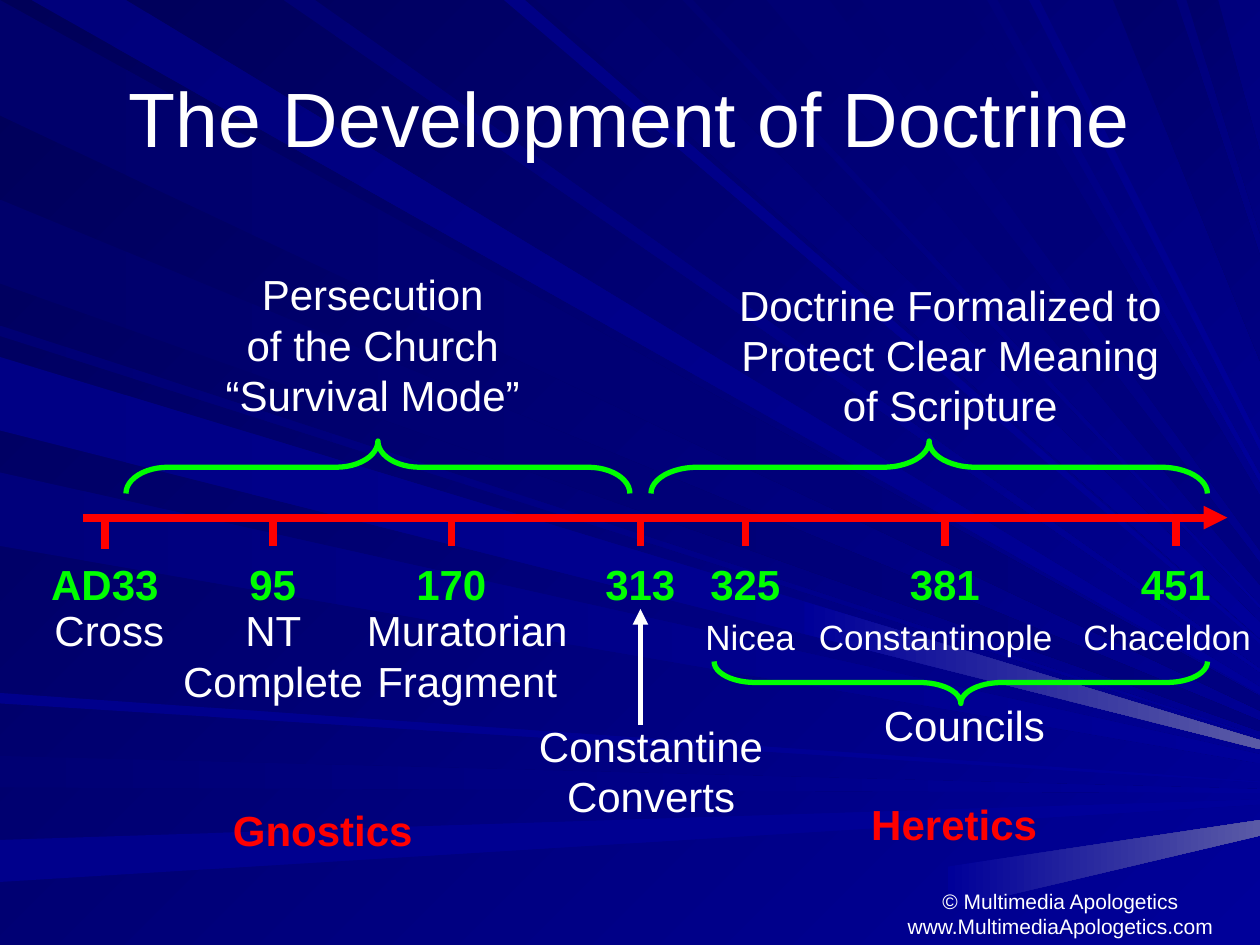
from dataclasses import dataclass

from lxml import etree
from pptx import Presentation
from pptx.dml.color import RGBColor
from pptx.enum.shapes import MSO_CONNECTOR, MSO_SHAPE
from pptx.enum.text import MSO_ANCHOR, PP_ALIGN
from pptx.oxml.ns import qn
from pptx.util import Emu, Inches, Pt

LEFT, CENTER = PP_ALIGN.LEFT, PP_ALIGN.CENTER
TOP, MIDDLE, BOTTOM = MSO_ANCHOR.TOP, MSO_ANCHOR.MIDDLE, MSO_ANCHOR.BOTTOM
STRAIGHT, BRACE = MSO_CONNECTOR.STRAIGHT, MSO_SHAPE.RIGHT_BRACE
FONT = "Arial"
COLS, ROWS = 120, 90  # grid of the 10 x 7.5 inch slide
CELL = Inches(10) / COLS
VANISH_X, VANISH_Y = 114 * COLS / 100, 84 * ROWS / 100  # where the rays meet

COLORS = {"white": "FFFFFF", "red": "FF0000", "green": "00FF00", "haze": "5A5AA6",
          "night": "000058", "dark": "00006B", "deep": "000073", "navy": "00007B",
          "dusk": "000080", "blue": "000085", "clear": "00008C", "royal": "000099"}


@dataclass
class Ray:
    first: float  # span on the top or left edge
    last: float
    start: str
    end: str = "royal"
    near: float = 0  # share of the way to the vanishing point


@dataclass
class Label:
    text: str
    x: float
    y: float
    w: float
    size: int = 24
    lines: int = 1
    color: str = "white"
    bold: bool = False
    align: PP_ALIGN = CENTER
    anchor: MSO_ANCHOR = TOP
    wrap: bool = True

    @property
    def h(self) -> float:
        return 1.2 + self.lines * self.size / 5


@dataclass
class Brace:
    x: float
    y: float
    w: float
    h: float
    rotation: int


@dataclass
class Line:
    x1: float
    y1: float
    x2: float
    y2: float
    color: str = "red"
    width: float = 4.5
    arrow: bool = False


TOP_RAYS = [
    Ray(3, 12, "navy"), Ray(27, 30, "deep"), Ray(48, 50, "blue"), Ray(51, 59, "dark"),
    Ray(65, 66, "deep"), Ray(73, 79, "deep", "dusk"), Ray(82, 92, "deep", "dusk"),
    Ray(94, 95, "navy"), Ray(98, 99, "blue"), Ray(106, 112, "dark", "dusk"),
    Ray(113, 116, "dark", "dusk"),
]
LEFT_RAYS = [
    Ray(0, 11, "dark", "dusk"), Ray(19, 27, "dark", "dusk"), Ray(31, 32, "deep"),
    Ray(34, 41, "blue"), Ray(34, 41, "royal", "haze", 0.56), Ray(45, 52, "navy"),
    Ray(66, 67, "clear"), Ray(72, 75, "deep"), Ray(80, 84, "clear"),
    Ray(96, 108, "royal", "haze", 0.66),
]
DATES = {"AD33": 10, "95": 26, "170": 43, "313": 61, "325": 71, "381": 90, "451": 112}
LABELS = [
    Label("© Multimedia Apologetics\nwww.MultimediaApologetics.com", 82, 84, 38, 12, 2, anchor=BOTTOM),
    Label("Cross", 4, 57, 15, align=LEFT),
    Label("NT Complete", 16, 57, 20, lines=2),
    Label("Muratorian\nFragment", 33, 57, 23, lines=2),
    Label("Constantine\nConverts", 49, 68, 26, lines=2),
    Label("Nicea", 66, 58, 15, 20, align=LEFT),
    Label("Constantinople", 76.8, 58, 25.5, 20, align=LEFT),
    Label("Chaceldon", 102, 58, 20, 20, align=LEFT),
    Label("Councils", 83, 66, 17.8, align=LEFT, wrap=False),
    Label("Persecution\nof the Church\n“Survival Mode”", 20, 25, 31, lines=3),
    Label("Doctrine Formalized to Protect Clear Meaning of Scripture", 68, 26, 45, lines=3),
    Label("Gnostics", 21, 76, 19.6, color="red", bold=True, align=LEFT, wrap=False),
    Label("Heretics", 81.8, 75.5, 18.2, color="red", bold=True, align=LEFT, wrap=False),
]
BRACES = [Brace(12, 42, 48, 5, 270), Brace(62, 42, 53, 5, 270), Brace(68, 63, 47, 4, 90)]
AXIS = Line(7.9, 49.3, 116.9, 49.3, arrow=True)
CONVERSION = Line(61, 69, 61, 58, "white", 3, True)


def cells(*values: float) -> list[Emu]:
    return [Emu(round(v * CELL)) for v in values]


def rgb(name: str) -> RGBColor:
    return RGBColor.from_string(COLORS[name])


def paint(fill, start: str, end: str, angle: int) -> None:
    fill.gradient()
    fill.gradient_angle = -angle % 360
    for stop, name in zip(fill.gradient_stops, (start, end)):
        stop.color.rgb = rgb(name)


def toward_vanish(x: float, y: float, share: float) -> list[Emu]:
    return cells(x + (VANISH_X - x) * share, y + (VANISH_Y - y) * share)


def draw_ray(slide, ray: Ray, from_top: bool) -> None:
    ends = [(v, 0) if from_top else (0, v) for v in (ray.first, ray.last)]
    near = [toward_vanish(x, y, ray.near) for x, y in ends]
    far = [toward_vanish(x, y, (COLS - x) / (VANISH_X - x)) for x, y in ends]
    builder = slide.shapes.build_freeform(*near[0])
    builder.add_line_segments([far[0], far[1], near[1]], close=True)
    sp = builder.convert_to_shape()
    sp.shadow.inherit = False
    sp.line.fill.background()
    paint(sp.fill, ray.start, ray.end, 45 if from_top else 0)


def format_text(tf, size: int, color: str, bold: bool, align: PP_ALIGN) -> None:
    for p in tf.paragraphs:
        p.alignment = align
        for r in p.runs:
            r.font.name, r.font.size, r.font.bold = FONT, Pt(size), bold
            r.font.color.rgb = rgb(color)


def draw_label(slide, label: Label):
    tf = slide.shapes.add_textbox(*cells(label.x, label.y, label.w, label.h)).text_frame
    tf.word_wrap = label.wrap
    tf.vertical_anchor = label.anchor
    tf.text = label.text
    format_text(tf, label.size, label.color, label.bold, label.align)
    return tf


def draw_dates(slide) -> None:
    row = Label("".join("\t" + date for date in DATES), 2.4, 52.6, 115.6,
                color="green", bold=True, align=LEFT)
    tf = draw_label(slide, row)
    tabs = etree.SubElement(tf.paragraphs[0]._p.get_or_add_pPr(), qn("a:tabLst"))
    for col in DATES.values():
        pos = cells(col - row.x)[0] - tf.margin_left
        etree.SubElement(tabs, qn("a:tab"), pos=str(pos), algn="ctr")


def draw_line(slide, line: Line) -> None:
    cxn = slide.shapes.add_connector(STRAIGHT, *cells(line.x1, line.y1, line.x2, line.y2))
    cxn.line.color.rgb = rgb(line.color)
    cxn.line.width = Pt(line.width)
    props = cxn._element.spPr
    if line.arrow:
        etree.SubElement(props.find(qn("a:ln")), qn("a:tailEnd"), type="triangle")
    etree.SubElement(props, qn("a:effectLst"))


def draw_brace(slide, b: Brace) -> None:
    # The upright brace turns about its centre to lie in the given area
    left, top = b.x + (b.w - b.h) / 2, b.y + (b.h - b.w) / 2
    sp = slide.shapes.add_shape(BRACE, *cells(left, top, b.h, b.w))
    sp.rotation = b.rotation
    sp.adjustments[0] = b.w / b.h / 12
    sp.shadow.inherit = False
    sp.fill.background()
    sp.line.color.rgb = rgb("green")
    sp.line.width = Pt(3)


def main() -> None:
    prs = Presentation()
    prs.slide_width, prs.slide_height = cells(COLS, ROWS)
    slide = prs.slides.add_slide(prs.slide_layouts[5])

    # Background and rays
    paint(slide.background.fill, "night", "royal", 45)
    for rays, from_top in ((LEFT_RAYS, False), (TOP_RAYS, True)):
        for ray in rays:
            draw_ray(slide, ray, from_top)

    # Title, brought in front of the rays
    title = slide.shapes.title
    slide.shapes._spTree.append(title._element)
    title.left, title.top, title.width, title.height = cells(6, 3.6, 108, 15)
    title.text_frame.text = "The Development of Doctrine"
    title.text_frame.vertical_anchor = MIDDLE
    format_text(title.text_frame, 44, "white", False, CENTER)

    # Timeline with ticks and dates
    draw_line(slide, AXIS)
    for i, col in enumerate(DATES.values()):
        top = 49 if i else AXIS.y1
        draw_line(slide, Line(col, top, col, top + 3))
    draw_dates(slide)

    # Events, periods and groups
    draw_line(slide, CONVERSION)
    for brace in BRACES:
        draw_brace(slide, brace)
    for label in LABELS:
        draw_label(slide, label)

    prs.save("out.pptx")


if __name__ == "__main__":
    main()
